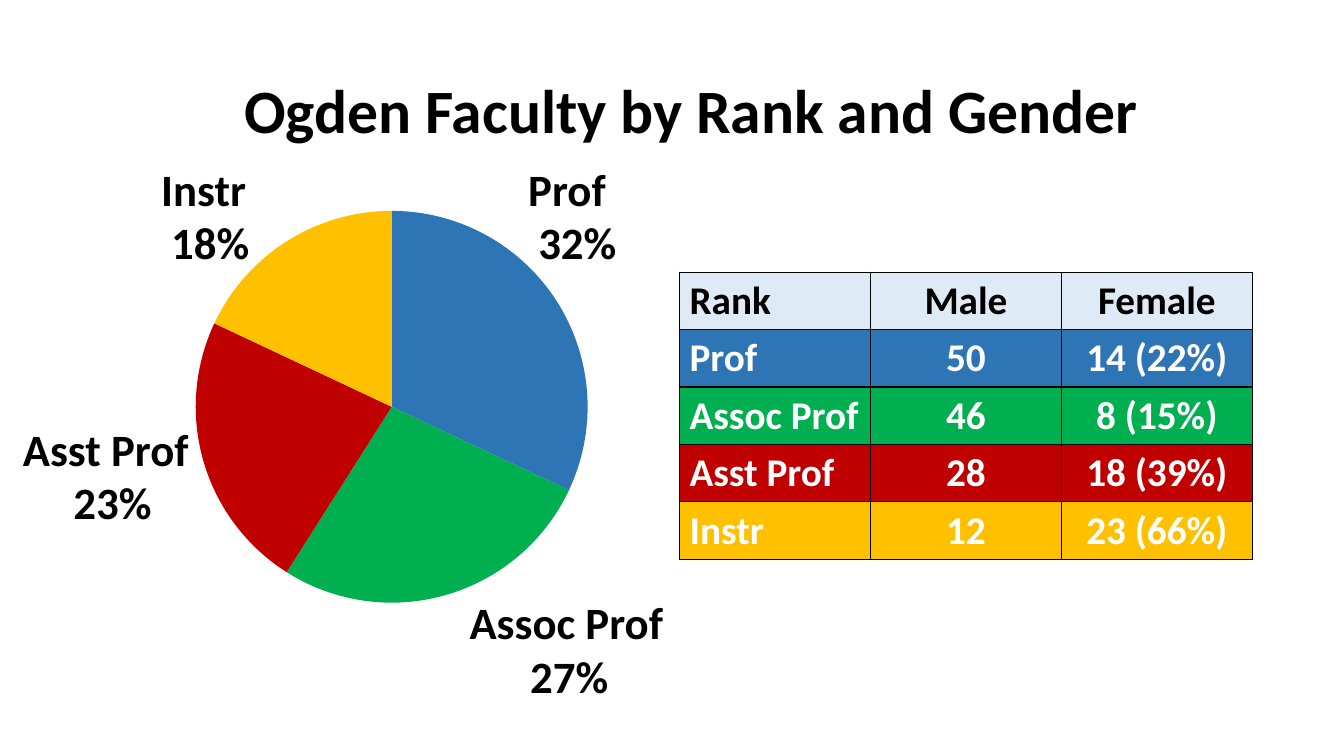
from lxml import etree
from pptx import Presentation
from pptx.chart import data
from pptx.dml.color import RGBColor
from pptx.enum import chart as chart_enum, text
from pptx.oxml import ns
from pptx.util import Inches, Pt

FONT = "Calibri"
COLORS = {
    "black": "000000", "white": "FFFFFF", "header": "DEEBF7",
    "Prof": "2E75B6", "Assoc Prof": "00B050",
    "Asst Prof": "C00000", "Instr": "FFC000",
}
HEADINGS = ("Rank", "Male", "Female")
FACULTY = [
    ("Prof", "50", "14 (22%)"),
    ("Assoc Prof", "46", "8 (15%)"),
    ("Asst Prof", "28", "18 (39%)"),
    ("Instr", "12", "23 (66%)"),
]
SHARES = {"Prof": 32, "Assoc Prof": 27, "Asst Prof": 23, "Instr": 18}
LABEL_SPOTS = {
    "Prof": (5.14, 1.55, 1.15, 0.1),
    "Assoc Prof": (4.56, 5.85, 2.24, 0.6),
    "Instr": (1.5, 1.55, 1.19, 0.1),
    "Asst Prof": (0.13, 4.13, 1.96, 0.5),
}
PIE_AREA = {"x": 0.089, "y": 0.025, "w": 0.822, "h": 0.862}


def rgb(name):
    """Return the named colour."""
    return RGBColor.from_string(COLORS[name])


def style_text(frame, size, color="black"):
    """Format every run of a text frame in bold."""
    for paragraph in frame.paragraphs:
        for run in paragraph.runs:
            run.font.name = FONT
            run.font.size = Pt(size)
            run.font.bold = True
            run.font.color.rgb = rgb(color)


def add_title(slide, wording):
    """Add the centred slide title."""
    frame = slide.shapes.add_textbox(
        Inches(1.11), Inches(0.4), Inches(11.5), Inches(1.45)).text_frame
    frame.word_wrap = True
    frame.vertical_anchor = text.MSO_ANCHOR.MIDDLE
    frame.text = wording
    frame.paragraphs[0].alignment = text.PP_ALIGN.CENTER
    frame.paragraphs[0].line_spacing = 0.9
    style_text(frame, 44)


def add_share_label(slide, rank):
    """Add a rank name with its indented percentage below."""
    left, top, width, indent = LABEL_SPOTS[rank]
    frame = slide.shapes.add_textbox(
        Inches(left), Inches(top), Inches(width), Inches(1.18)).text_frame
    frame.word_wrap = True
    frame.text = f"{rank}\n{SHARES[rank]}%"
    share_format = frame.paragraphs[1]._p.get_or_add_pPr()
    share_format.set("marL", str(Inches(indent)))
    share_format.set("indent", "0")
    style_text(frame, 32)


def set_plot_area(chart):
    """Fix the inner plot area as fractions of the chart."""
    plot_area = chart._chartSpace.chart.plotArea
    for old_layout in plot_area.findall(ns.qn("c:layout")):
        plot_area.remove(old_layout)
    layout = etree.Element(ns.qn("c:layout"))
    manual = etree.SubElement(layout, ns.qn("c:manualLayout"))
    settings = {"layoutTarget": "inner", "xMode": "edge", "yMode": "edge", **PIE_AREA}
    for tag, value in settings.items():
        etree.SubElement(manual, ns.qn(f"c:{tag}")).set("val", str(value))
    plot_area.insert(0, layout)


def add_rank_pie(slide):
    """Add the pie of faculty shares by rank."""
    shares = data.CategoryChartData()
    shares.categories = [str(n) for n in range(1, len(SHARES) + 1)]
    shares.add_series("Series 1", SHARES.values())
    chart = slide.shapes.add_chart(
        chart_enum.XL_CHART_TYPE.PIE, Inches(1.52), Inches(1.98),
        Inches(4.73), Inches(4.51), shares).chart
    chart.has_title = False
    chart.has_legend = False
    chart.font.name = FONT
    chart.font.size = Pt(10)
    chart.font.color.rgb = rgb("black")
    pie = chart.plots[0]
    pie.vary_by_categories = True
    for index, rank in enumerate(SHARES):
        wedge = pie.series[0].points[index].format
        wedge.fill.solid()
        wedge.fill.fore_color.rgb = rgb(rank)
        wedge.line.fill.background()
    set_plot_area(chart)


def add_borders(cell):
    """Draw a thin black line on each side of a cell."""
    properties = cell._tc.get_or_add_tcPr()
    for position, side in enumerate(("lnL", "lnR", "lnT", "lnB")):
        border = etree.Element(ns.qn(f"a:{side}"), w=str(Pt(1)))
        fill = etree.SubElement(border, ns.qn("a:solidFill"))
        etree.SubElement(fill, ns.qn("a:srgbClr"), val=COLORS["black"])
        properties.insert(position, border)


def add_gender_table(slide):
    """Add the table of faculty by rank and gender."""
    rows = [HEADINGS, *FACULTY]
    table = slide.shapes.add_table(
        len(rows), len(HEADINGS), Inches(6.74), Inches(2.7),
        Inches(5.68), Inches(0.57 * len(rows))).table
    table.first_row = True
    table.horz_banding = False
    for r, row in enumerate(rows):
        fill, ink = (row[0], "white") if r else ("header", "black")
        for c, wording in enumerate(row):
            cell = table.cell(r, c)
            cell.text_frame.text = wording
            if c:
                cell.text_frame.paragraphs[0].alignment = text.PP_ALIGN.CENTER
            style_text(cell.text_frame, 28, ink)
            cell.fill.solid()
            cell.fill.fore_color.rgb = rgb(fill)
            add_borders(cell)


def main():
    """Build and save the faculty slide."""
    deck = Presentation()
    deck.slide_width, deck.slide_height = Inches(13.33), Inches(7.5)
    slide = deck.slides.add_slide(deck.slide_layouts[6])
    add_title(slide, "Ogden Faculty by Rank and Gender")
    add_rank_pie(slide)
    add_gender_table(slide)
    for rank in LABEL_SPOTS:
        add_share_label(slide, rank)
    deck.save("out.pptx")


if __name__ == "__main__":
    main()
